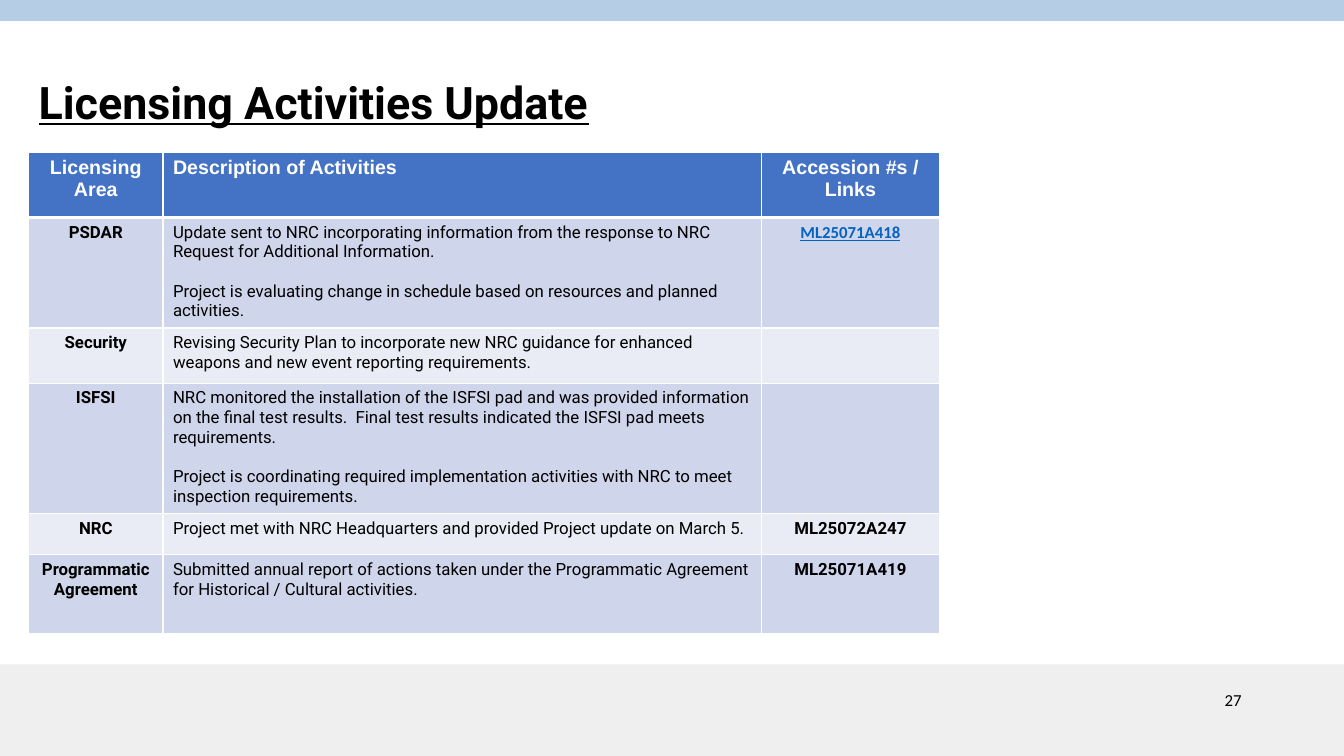
import pptx
import pptx.util
import pptx.dml.color
import pptx.enum.shapes
import pptx.enum.text
import pptx.oxml.ns
from lxml import etree

Pt = pptx.util.Pt
ALIGN = pptx.enum.text.PP_ALIGN
ANCHOR = pptx.enum.text.MSO_ANCHOR

# Content
TITLE = "Licensing Activities Update"
PAGE_NUMBER = "27"
HEADER = ("Licensing Area", ["Description of Activities"], "Accession #s / Links")
ACTIVITIES = [
    ("PSDAR",
     ["Update sent to NRC incorporating information from the response to NRC "
      "Request for Additional Information.",
      "Project is evaluating change in schedule based on resources and planned activities."],
     "ML25071A418"),
    ("Security",
     ["Revising Security Plan to incorporate new NRC guidance for enhanced weapons "
      "and new event reporting requirements."],
     ""),
    ("ISFSI",
     ["NRC monitored the installation of the ISFSI pad and was provided information on "
      "the final test results.  Final test results indicated the ISFSI pad meets requirements.",
      "Project is coordinating required implementation activities with NRC to meet "
      "inspection requirements."],
     ""),
    ("NRC",
     ["Project met with NRC Headquarters and provided Project update on March 5."],
     "ML25072A247"),
    ("Programmatic Agreement",
     ["Submitted annual report of actions taken under the Programmatic Agreement for "
      "Historical / Cultural activities."],
     "ML25071A419"),
]
LINKED = "ML25071A418"

# Layout in points
WIDTH, HEIGHT = 960, 540
LEFT = 20.5
TABLE_TOP = 108.6
COLUMN_WIDTHS = (95.9, 427.5, 127.2)
ROW_HEIGHTS = (46.8, 77.8, 39.5, 91.5, 29.4, 56.5)
BLANK_LINE = 14

# Colours
BLACK, WHITE = "000000", "FFFFFF"
HEADER_FILL, LINK_BLUE = "4472C4", "0563C1"
BAND_FILLS = ("CFD5EA", "E9EBF5")


def rgb(value):
    return pptx.dml.color.RGBColor.from_string(value)


def add_element(parent, tag, **attributes):
    return etree.SubElement(parent, pptx.oxml.ns.qn(tag), attributes)


def style(paragraph, name, size, color=BLACK, bold=False, underline=False, align=ALIGN.LEFT):
    paragraph.alignment = align
    font = paragraph.font
    font.name, font.size, font.bold = name, Pt(size), bold
    font.color.rgb = rgb(color)
    if underline:
        font.underline = True


def add_band(slide, top, height, color, opacity):
    band = slide.shapes.add_shape(pptx.enum.shapes.MSO_SHAPE.RECTANGLE,
                                  0, Pt(top), Pt(WIDTH), Pt(height))
    band.shadow.inherit = False
    band.line.fill.background()
    band.fill.solid()
    band.fill.fore_color.rgb = rgb(color)
    color_element = band.fill._xPr.find(".//" + pptx.oxml.ns.qn("a:srgbClr"))
    add_element(color_element, "a:alpha", val=str(opacity * 1000))


def add_text(slide, text, left, top, width, height, anchor):
    box = slide.shapes.add_textbox(Pt(left), Pt(top), Pt(width), Pt(height))
    frame = box.text_frame
    frame.word_wrap = True
    frame.vertical_anchor = anchor
    frame.text = text
    return frame.paragraphs[0]


def set_borders(cell, row):
    # The line below the header is heavier than the others
    widths = {"L": 1, "R": 1, "T": 3 if row == 1 else 1, "B": 3 if row == 0 else 1}
    properties = cell._tc.get_or_add_tcPr()
    for side, width in widths.items():
        line = add_element(properties, "a:ln" + side, w=str(Pt(width)))
        add_element(add_element(line, "a:solidFill"), "a:srgbClr", val=WHITE)


def fill_cell(cell, paragraphs, row, column):
    set_borders(cell, row)
    cell.fill.solid()
    cell.fill.fore_color.rgb = rgb(BAND_FILLS[(row - 1) % 2] if row else HEADER_FILL)
    cell.text_frame.text = "\n".join(paragraphs)
    align = ALIGN.LEFT if column == 1 else ALIGN.CENTER
    for index, paragraph in enumerate(cell.text_frame.paragraphs):
        if row == 0:
            style(paragraph, "Arial", 14, WHITE, bold=True, align=align)
        elif paragraphs[index] == LINKED:
            style(paragraph, "Calibri", 12, LINK_BLUE, bold=True, underline=True, align=align)
        else:
            style(paragraph, "Roboto", 12, bold=column != 1, align=align)
        if index:
            paragraph.space_before = Pt(BLANK_LINE)


presentation = pptx.Presentation()
presentation.slide_width, presentation.slide_height = Pt(WIDTH), Pt(HEIGHT)
slide = presentation.slides.add_slide(presentation.slide_layouts[6])

# Top and bottom bands
add_band(slide, 0, 15, "2E75B6", 35)
add_band(slide, 474.5, HEIGHT - 474.5, "D0CECE", 32)

# Title and page number
title = add_text(slide, TITLE, LEFT, 36, 828, 60, ANCHOR.BOTTOM)
title.line_spacing = 0.9
style(title, "Roboto", 32, bold=True, underline=True)
number = add_text(slide, PAGE_NUMBER, 678, 485.5, 216, 28.8, ANCHOR.MIDDLE)
style(number, "Calibri", 12, align=ALIGN.RIGHT)

# Activities table
rows = [HEADER] + ACTIVITIES
table = slide.shapes.add_table(len(rows), len(COLUMN_WIDTHS), Pt(LEFT), Pt(TABLE_TOP),
                               Pt(sum(COLUMN_WIDTHS)), Pt(sum(ROW_HEIGHTS))).table
for column, width in enumerate(COLUMN_WIDTHS):
    table.columns[column].width = Pt(width)
for row, (area, descriptions, accession) in enumerate(rows):
    table.rows[row].height = Pt(ROW_HEIGHTS[row])
    for column, paragraphs in enumerate(([area], descriptions, [accession])):
        fill_cell(table.cell(row, column), paragraphs, row, column)

presentation.save("out.pptx")
